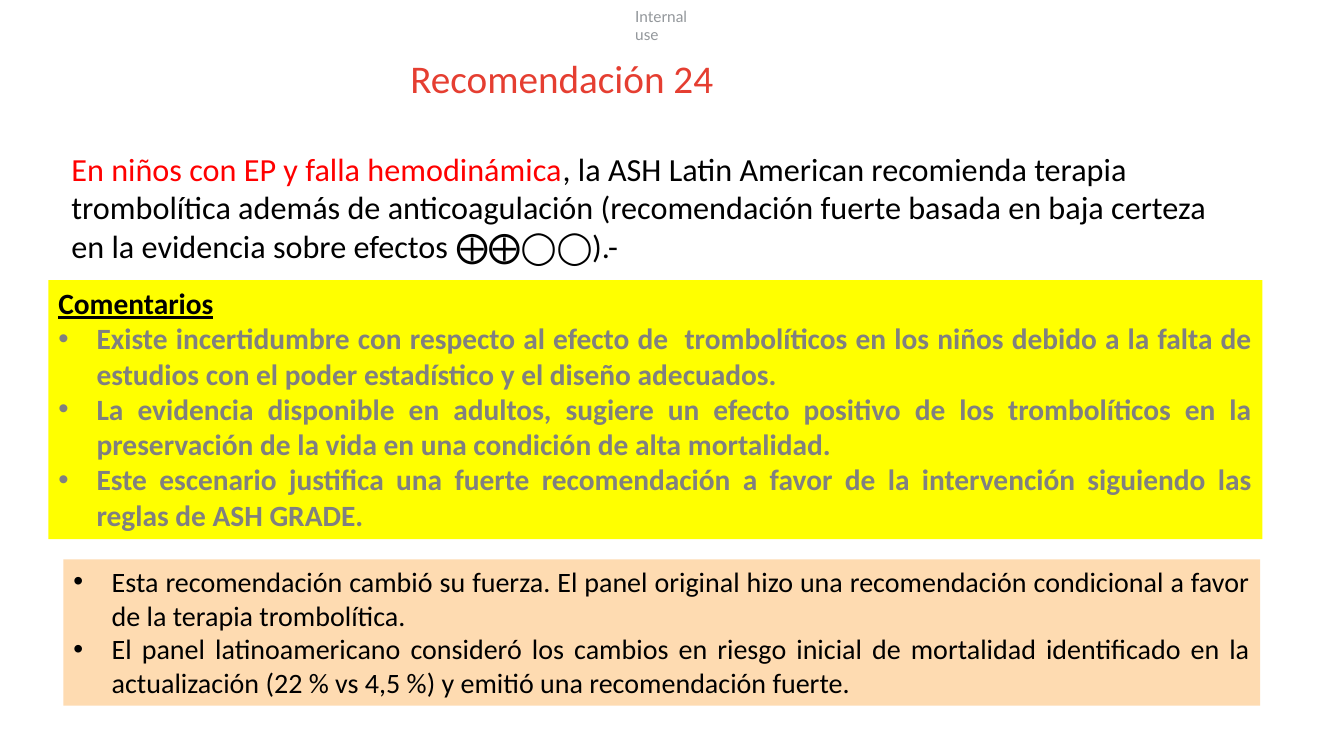
from dataclasses import dataclass

from lxml import etree
from pptx import Presentation
from pptx.dml.color import RGBColor
from pptx.enum.shapes import MSO_SHAPE
from pptx.enum.text import MSO_ANCHOR, PP_ALIGN
from pptx.oxml.ns import qn
from pptx.util import Inches, Pt

RECTANGLE = MSO_SHAPE.RECTANGLE
TOP = MSO_ANCHOR.TOP
LEFT, JUSTIFY = PP_ALIGN.LEFT, PP_ALIGN.JUSTIFY


@dataclass(frozen=True)
class Theme:
    body_font: str = "Calibri"
    label_font: str = "Lato"
    label_size: int = 11
    title_size: int = 28
    statement_size: int = 23
    comment_size: int = 21
    change_size: int = 20
    label: str = "93979B"
    title: str = "E53E31"
    highlight: str = "FF0000"
    text: str = "000000"
    muted: str = "808080"
    comment_fill: str = "FFFF00"
    change_fill: str = "FEDBB1"
    bullet_indent: float = 0.38


THEME = Theme()
SLIDE_SIZE = (13.33, 7.5)

LABEL = "Internal use"
TITLE = "Recomendación 24"
STATEMENT = [
    ("En niños con EP y falla hemodinámica", THEME.highlight),
    (", la ASH Latin American recomienda terapia trombolítica además de "
     "anticoagulación (recomendación fuerte basada en baja certeza en la "
     "evidencia sobre efectos ⨁⨁◯◯).-", THEME.text),
]
COMMENTS_HEADING = "Comentarios"
COMMENTS = [
    "Existe incertidumbre con respecto al efecto de  trombolíticos en los niños "
    "debido a la falta de estudios con el poder estadístico y el diseño adecuados.",
    "La evidencia disponible en adultos, sugiere un efecto positivo de los "
    "trombolíticos en la preservación de la vida en una condición de alta mortalidad.",
    "Este escenario justifica una fuerte recomendación a favor de la intervención "
    "siguiendo las reglas de ASH GRADE.",
]
CHANGES = [
    "Esta recomendación cambió su fuerza. El panel original hizo una recomendación "
    "condicional a favor de la terapia trombolítica.",
    "El panel latinoamericano consideró los cambios en riesgo inicial de mortalidad "
    "identificado en la actualización (22 % vs 4,5 %) y emitió una recomendación fuerte.",
]

# Left, top, width, height in inches
LABEL_AREA = (6.3, 0.07, 0.78, 0.18)
TITLE_AREA = (4.07, 0.59, 3.02, 0.46)
STATEMENT_AREA = (0.61, 1.43, 11.52, 1.26)
COMMENTS_AREA = (0.48, 2.78, 12.04, 2.57)
CHANGES_AREA = (0.63, 5.55, 11.87, 1.45)


def add_text_area(slide, area, fill=None, margins=True):
    """Add a text box, or a filled panel if a fill is given; return its text frame."""
    bounds = [Inches(length) for length in area]
    if fill:
        shape = slide.shapes.add_shape(RECTANGLE, *bounds)
        shape.shadow.inherit = False
        shape.fill.solid()
        shape.fill.fore_color.rgb = RGBColor.from_string(fill)
        shape.line.fill.background()
    else:
        shape = slide.shapes.add_textbox(*bounds)
    frame = shape.text_frame
    frame.word_wrap = True
    frame.vertical_anchor = TOP
    if not margins:
        frame.margin_left = frame.margin_right = 0
        frame.margin_top = frame.margin_bottom = 0
    return frame


def add_paragraph(frame, runs, size, font=THEME.body_font, bold=False,
                  underline=False, bullet=False):
    """Write (text, colour) runs into the empty first paragraph or a new one."""
    first = frame.paragraphs[0]
    paragraph = frame.add_paragraph() if first.runs else first
    paragraph.alignment = JUSTIFY if bullet else LEFT
    if bullet:
        properties = paragraph._p.get_or_add_pPr()
        indent = Inches(THEME.bullet_indent)
        properties.set("marL", str(indent))
        properties.set("indent", str(-indent))
        etree.SubElement(properties, qn("a:buFont")).set("typeface", "Arial")
        etree.SubElement(properties, qn("a:buChar")).set("char", "•")
    for text, color in runs:
        run = paragraph.add_run()
        run.text = text
        run.font.name = font
        run.font.size = Pt(size)
        run.font.bold = bold
        run.font.underline = underline
        run.font.color.rgb = RGBColor.from_string(color)
    return paragraph


def main():
    presentation = Presentation()
    presentation.slide_width, presentation.slide_height = map(Inches, SLIDE_SIZE)
    slide = presentation.slides.add_slide(presentation.slide_layouts[6])

    label = add_text_area(slide, LABEL_AREA, margins=False)
    add_paragraph(label, [(LABEL, THEME.label)], THEME.label_size, THEME.label_font)

    comments = add_text_area(slide, COMMENTS_AREA, THEME.comment_fill)
    add_paragraph(comments, [(COMMENTS_HEADING, THEME.text)], THEME.comment_size,
                  bold=True, underline=True)
    for comment in COMMENTS:
        add_paragraph(comments, [(comment, THEME.muted)], THEME.comment_size,
                      bold=True, bullet=True)

    title = add_text_area(slide, TITLE_AREA, margins=False)
    heading = add_paragraph(title, [(TITLE, THEME.title)], THEME.title_size)
    heading.line_spacing = 0.9

    statement = add_text_area(slide, STATEMENT_AREA)
    add_paragraph(statement, STATEMENT, THEME.statement_size)

    changes = add_text_area(slide, CHANGES_AREA, THEME.change_fill)
    for change in CHANGES:
        add_paragraph(changes, [(change, THEME.text)], THEME.change_size, bullet=True)

    presentation.save("out.pptx")


if __name__ == "__main__":
    main()
